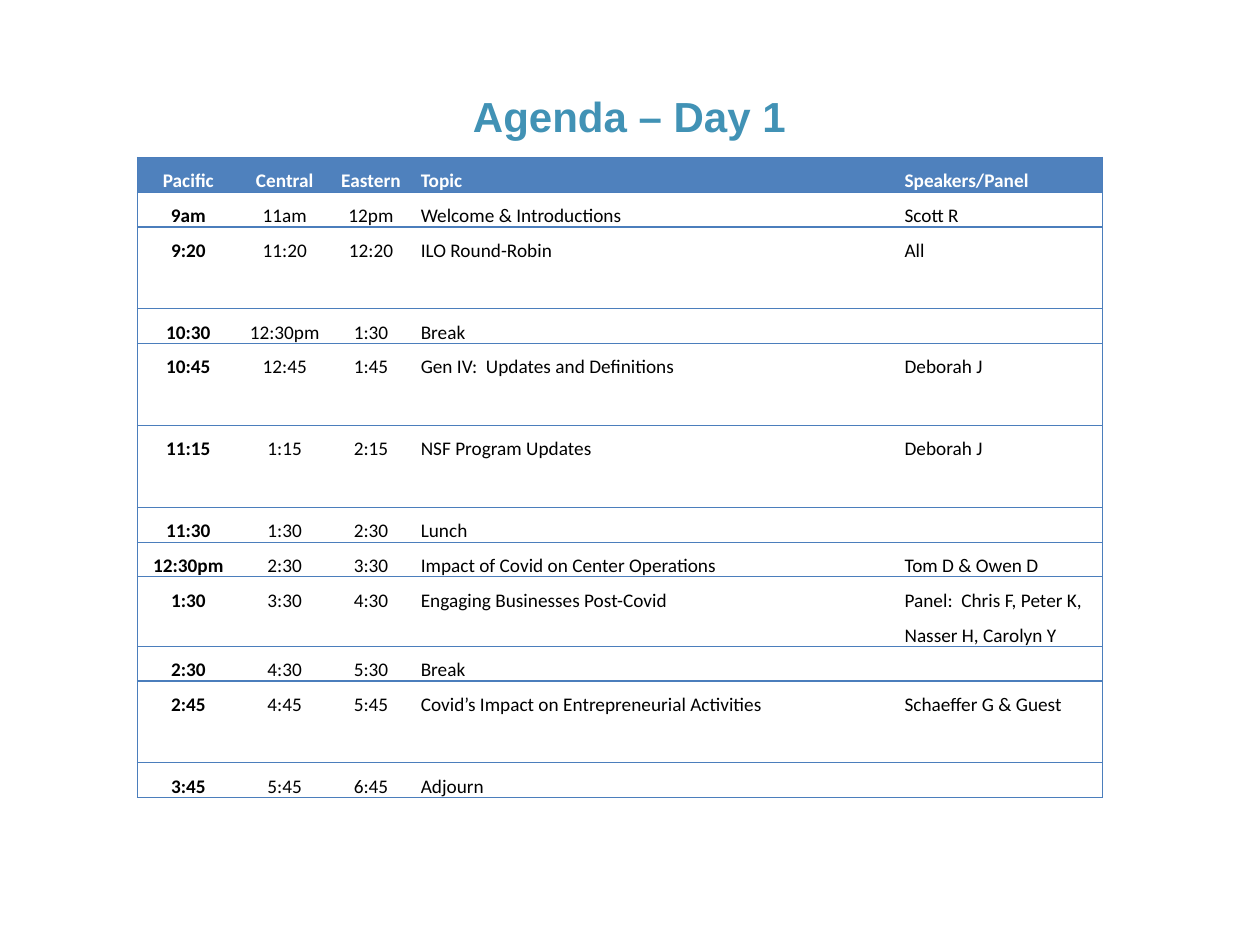
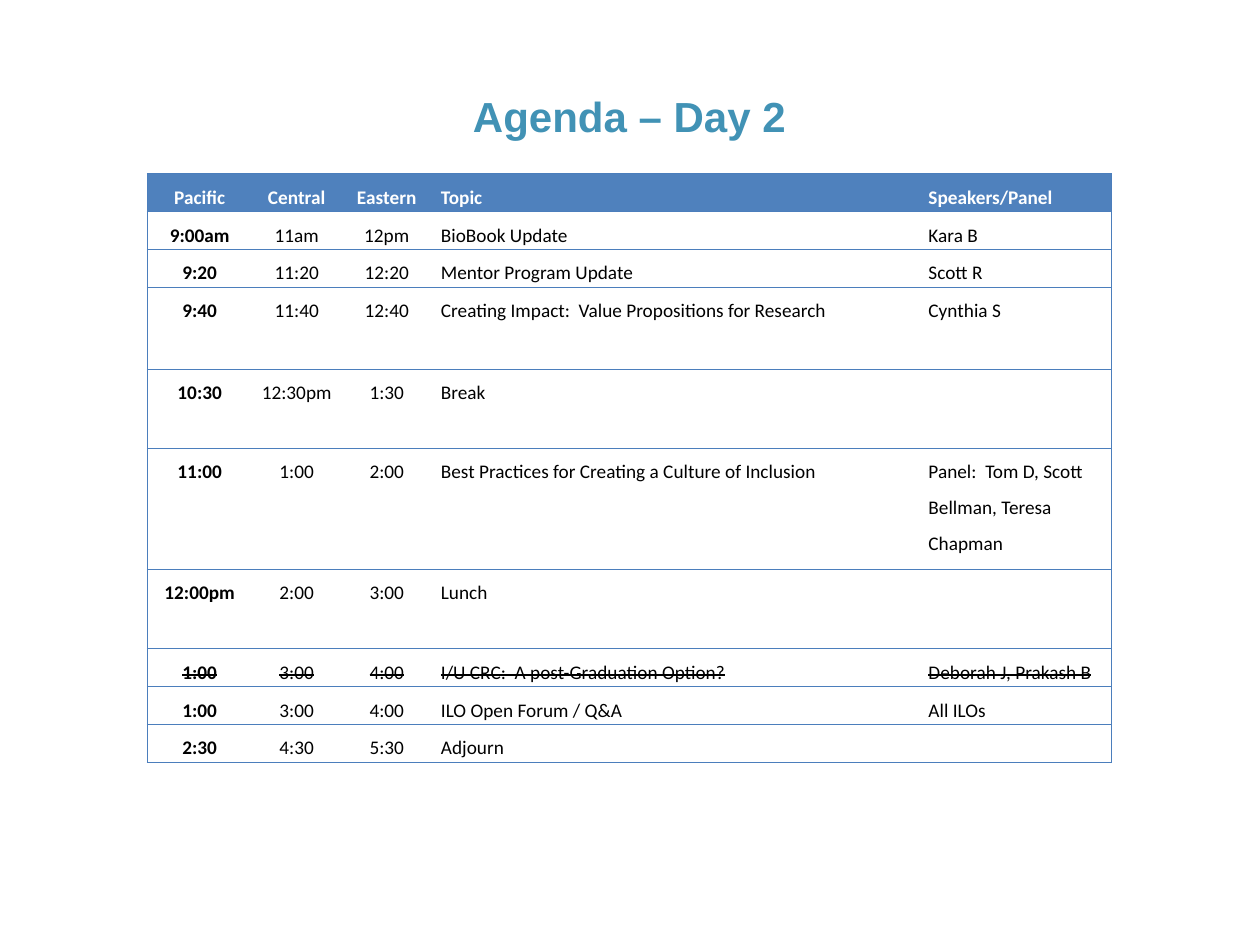
from dataclasses import dataclass

from lxml import etree
from pptx import Presentation
from pptx.dml.color import RGBColor
from pptx.enum import text
from pptx.oxml import ns
from pptx.util import Inches, Pt

TITLE_BLUE = RGBColor(0x41, 0x92, 0xB5)
HEADER_BLUE = RGBColor(0x4F, 0x81, 0xBD)
LINE_BLUE = RGBColor(0x4B, 0x7E, 0xBC)
WHITE = RGBColor(0xFF, 0xFF, 0xFF)
BLACK = RGBColor(0, 0, 0)

HEADINGS = ("Pacific", "Central", "Eastern", "Topic", "Speakers/Panel")
TIME_COLUMNS = 3
TITLE_ONLY = 5


@dataclass(frozen=True)
class Session:
    pacific: str
    central: str
    eastern: str
    topic: str
    speakers: str = ""
    height: float | None = None
    cancelled: bool = False

    @property
    def cells(self) -> tuple[str, ...]:
        return self.pacific, self.central, self.eastern, self.topic, self.speakers


@dataclass(frozen=True)
class Agenda:
    title: str
    left: float
    top: float
    widths: tuple[float, ...]
    row_height: float
    sessions: tuple[Session, ...]


DAY_1 = Agenda(
    "Agenda – Day 1", 1.09, 1.25, (0.81, 0.72, 0.65, 3.84, 1.64), 0.27,
    (
        Session("9am", "11am", "12pm", "Welcome & Introductions", "Scott R"),
        Session("9:20", "11:20", "12:20", "ILO Round-Robin", "All", 0.65),
        Session("10:30", "12:30pm", "1:30", "Break"),
        Session("10:45", "12:45", "1:45", "Gen IV:  Updates and Definitions",
                "Deborah J", 0.65),
        Session("11:15", "1:15", "2:15", "NSF Program Updates", "Deborah J", 0.65),
        Session("11:30", "1:30", "2:30", "Lunch"),
        Session("12:30pm", "2:30", "3:30", "Impact of Covid on Center Operations",
                "Tom D & Owen D"),
        Session("1:30", "3:30", "4:30", "Engaging Businesses Post-Covid",
                "Panel:  Chris F, Peter K, Nasser H, Carolyn Y", 0.55),
        Session("2:30", "4:30", "5:30", "Break"),
        Session("2:45", "4:45", "5:45", "Covid’s Impact on Entrepreneurial Activities",
                "Schaeffer G & Guest", 0.65),
        Session("3:45", "5:45", "6:45", "Adjourn"),
    ),
)

DAY_2 = Agenda(
    "Agenda – Day 2", 1.17, 1.38, (0.83, 0.71, 0.72, 3.87, 1.52), 0.3,
    (
        Session("9:00am", "11am", "12pm", "BioBook Update", "Kara B"),
        Session("9:20", "11:20", "12:20", "Mentor Program Update", "Scott R"),
        Session("9:40", "11:40", "12:40",
                "Creating Impact:  Value Propositions for Research", "Cynthia S", 0.65),
        Session("10:30", "12:30pm", "1:30", "Break", height=0.63),
        Session("11:00", "1:00", "2:00",
                "Best Practices for Creating a Culture of Inclusion",
                "Panel:  Tom D, Scott Bellman, Teresa Chapman", 0.96),
        Session("12:00pm", "2:00", "3:00", "Lunch", height=0.63),
        Session("1:00", "3:00", "4:00", "I/U CRC:  A post-Graduation Option?",
                "Deborah J, Prakash B", cancelled=True),
        Session("1:00", "3:00", "4:00", "ILO Open Forum / Q&A", "All ILOs"),
        Session("2:30", "4:30", "5:30", "Adjourn"),
    ),
)


def set_title(slide, title: str) -> None:
    sp = slide.shapes.title
    sp.left, sp.top = Inches(0.87), Inches(0.59)
    sp.width, sp.height = Inches(8.25), Inches(0.54)
    tf = sp.text_frame
    tf.word_wrap = True
    tf.auto_size = text.MSO_AUTO_SIZE.SHAPE_TO_FIT_TEXT
    tf.vertical_anchor = text.MSO_ANCHOR.TOP
    p = tf.paragraphs[0]
    p.alignment = text.PP_ALIGN.CENTER
    p.line_spacing = 1.2
    r = p.add_run()
    r.text = title
    r.font.name, r.font.size, r.font.bold = "Arial", Pt(24), True
    r.font.color.rgb = TITLE_BLUE


def set_borders(cell, sides: set[str]) -> None:
    """Draw the named sides (L, R, T, B) and clear the others."""
    tc_pr = cell._tc.get_or_add_tcPr()
    for i, side in enumerate("LRTB"):
        ln = etree.Element(ns.qn(f"a:ln{side}"), w=str(Pt(0.75)))
        if side in sides:
            fill = etree.SubElement(ln, ns.qn("a:solidFill"))
            etree.SubElement(fill, ns.qn("a:srgbClr"), val=str(LINE_BLUE))
        else:
            etree.SubElement(ln, ns.qn("a:noFill"))
        tc_pr.insert(i, ln)


def fill_cell(cell, words: str, column: int, header: bool, struck: bool) -> None:
    cell.margin_left = cell.margin_right = Inches(0.07)
    cell.margin_top = cell.margin_bottom = 0
    if header:
        cell.fill.solid()
        cell.fill.fore_color.rgb = HEADER_BLUE
    else:
        cell.fill.background()
    p = cell.text_frame.paragraphs[0]
    centred = column < TIME_COLUMNS
    p.alignment = text.PP_ALIGN.CENTER if centred else text.PP_ALIGN.LEFT
    p.line_spacing, p.space_after = 1.5, Pt(8)
    if not words:
        etree.SubElement(p._p, ns.qn("a:endParaRPr"), sz="1100")
        return
    r = p.add_run()
    r.text = words
    r.font.name, r.font.size = "Calibri", Pt(11)
    r.font.bold = header or column == 0
    r.font.color.rgb = WHITE if header else BLACK
    if struck:
        r._r.get_or_add_rPr().set("strike", "sngStrike")


def add_agenda(prs, agenda: Agenda) -> None:
    slide = prs.slides.add_slide(prs.slide_layouts[TITLE_ONLY])
    set_title(slide, agenda.title)
    rows = (Session(*HEADINGS), *agenda.sessions)
    heights = [s.height or agenda.row_height for s in rows]
    table = slide.shapes.add_table(
        len(rows), len(HEADINGS), Inches(agenda.left), Inches(agenda.top),
        Inches(sum(agenda.widths)), Inches(sum(heights))).table
    table.horz_banding = False
    for column, width in zip(table.columns, agenda.widths):
        column.width = Inches(width)
    edges = {0: {"L"}, len(HEADINGS) - 1: {"R"}}
    for i, session in enumerate(rows):
        table.rows[i].height = Inches(heights[i])
        for j, words in enumerate(session.cells):
            cell = table.cell(i, j)
            fill_cell(cell, words, j, i == 0, session.cancelled)
            set_borders(cell, {"T", "B"} | edges.get(j, set()))


def main() -> None:
    prs = Presentation()
    prs.slide_width, prs.slide_height = Inches(10), Inches(7.5)
    for agenda in (DAY_1, DAY_2):
        add_agenda(prs, agenda)
    prs.save("out.pptx")


if __name__ == "__main__":
    main()
